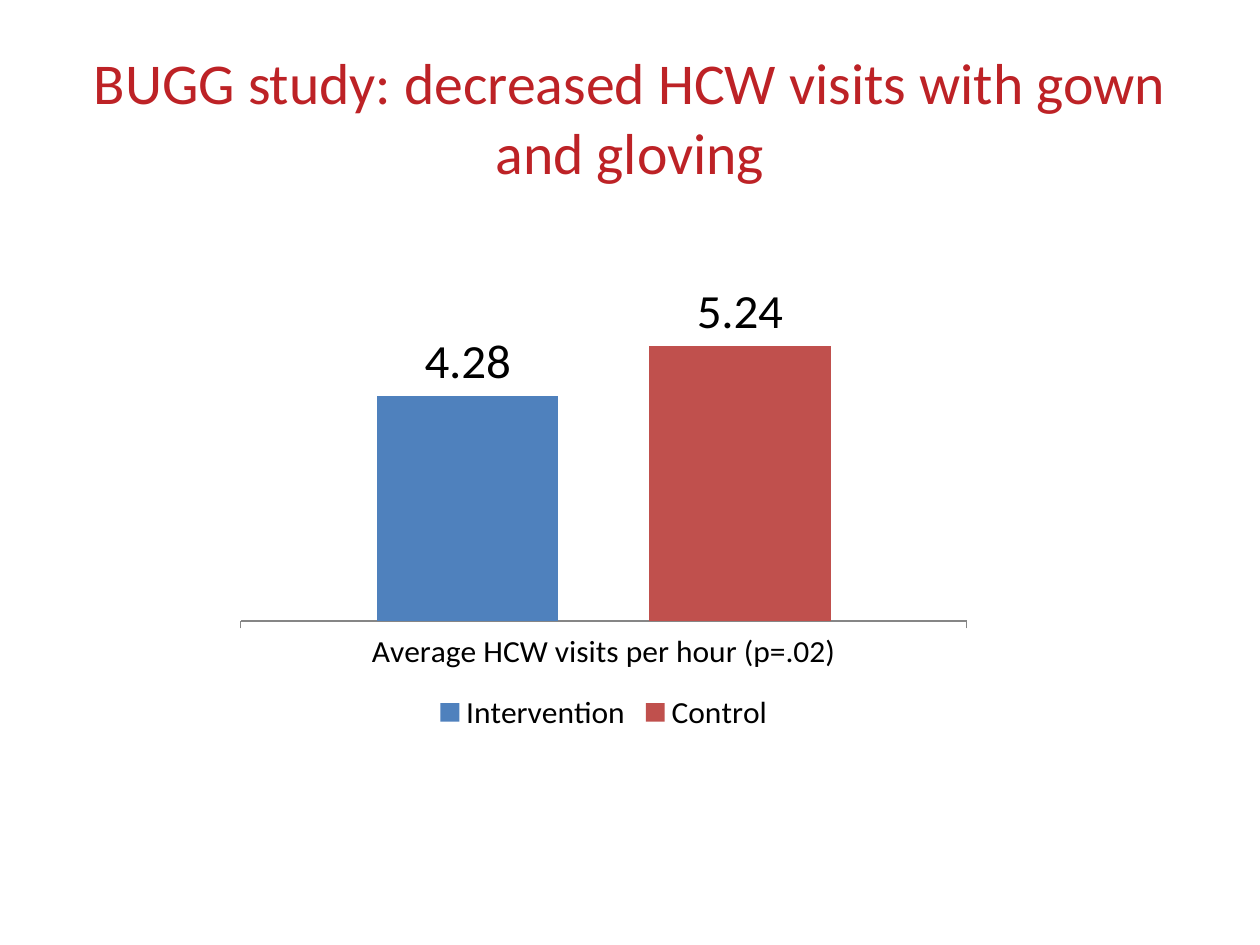
"""Build a slide comparing HCW visits per hour in the BUGG study."""
from pptx import Presentation
from pptx.chart.data import CategoryChartData
from pptx.dml.color import RGBColor
from pptx.enum.chart import XL_CHART_TYPE, XL_LABEL_POSITION, XL_LEGEND_POSITION, XL_TICK_MARK
from pptx.enum.text import MSO_ANCHOR, PP_ALIGN
from pptx.util import Pt

TITLE_RED = RGBColor(0xBD, 0x22, 0x26)
INTERVENTION_BLUE = RGBColor(0x4F, 0x81, 0xBD)
CONTROL_RED = RGBColor(0xC0, 0x50, 0x4D)
AXIS_GRAY = RGBColor(0x86, 0x86, 0x86)
BLACK = RGBColor(0, 0, 0)


def format_font(font, size, color=BLACK, name="Calibri"):
    font.name = name
    font.size = Pt(size)
    font.bold = False
    font.color.rgb = color


def write_text(text_frame, text, size, color=BLACK, alignment=PP_ALIGN.CENTER,
               anchor=MSO_ANCHOR.MIDDLE):
    text_frame.word_wrap = True
    text_frame.vertical_anchor = anchor
    paragraph = text_frame.paragraphs[0]
    paragraph.alignment = alignment
    run = paragraph.add_run()
    run.text = text
    format_font(run.font, size, color)


class SlideBuilder:
    title_size = 33
    chart_size = 18
    label_size = 28

    def __init__(self, presentation):
        self.slide = presentation.slides.add_slide(presentation.slide_layouts[5])

    def add_title(self, text, left, top, width, height):
        title = self.slide.shapes.title
        title.left, title.top = Pt(left), Pt(top)
        title.width, title.height = Pt(width), Pt(height)
        write_text(title.text_frame, text, size=self.title_size, color=TITLE_RED)

    def add_column_chart(self, category, series_rows, maximum, left, top, width, height):
        chart_data = CategoryChartData()
        chart_data.categories = [category]
        for name, value, _ in series_rows:
            chart_data.add_series(name, [value])
        chart = self.slide.shapes.add_chart(
            XL_CHART_TYPE.COLUMN_CLUSTERED,
            Pt(left), Pt(top), Pt(width), Pt(height), chart_data).chart
        format_font(chart.font, self.chart_size)
        chart.has_title = False
        chart.has_legend = True
        chart.legend.position = XL_LEGEND_POSITION.BOTTOM
        chart.legend.include_in_layout = False

        chart.value_axis.visible = False
        chart.value_axis.has_major_gridlines = False
        chart.value_axis.minimum_scale = 0
        chart.value_axis.maximum_scale = maximum
        chart.category_axis.major_tick_mark = XL_TICK_MARK.OUTSIDE
        chart.category_axis.format.line.color.rgb = AXIS_GRAY
        chart.category_axis.format.line.width = Pt(0.75)

        plot = chart.plots[0]
        plot.gap_width = 150
        plot.overlap = -50
        plot.vary_by_categories = False
        for series, (_, _, color) in zip(plot.series, series_rows):
            series.format.fill.solid()
            series.format.fill.fore_color.rgb = color
            labels = series.data_labels
            labels.show_value = True
            labels.position = XL_LABEL_POSITION.OUTSIDE_END
            format_font(labels.font, self.label_size)


def main():
    presentation = Presentation()
    presentation.slide_width, presentation.slide_height = Pt(720), Pt(540)
    builder = SlideBuilder(presentation)
    builder.add_title("BUGG study: decreased HCW visits with gown and gloving",
                      left=36, top=21.6, width=648, height=90)
    builder.add_column_chart(
        "Average HCW visits per hour (p=.02)",
        [("Intervention", 4.28, INTERVENTION_BLUE), ("Control", 5.24, CONTROL_RED)],
        maximum=6, left=129, top=162, width=432, height=259.2)
    presentation.save("out.pptx")


if __name__ == "__main__":
    main()
